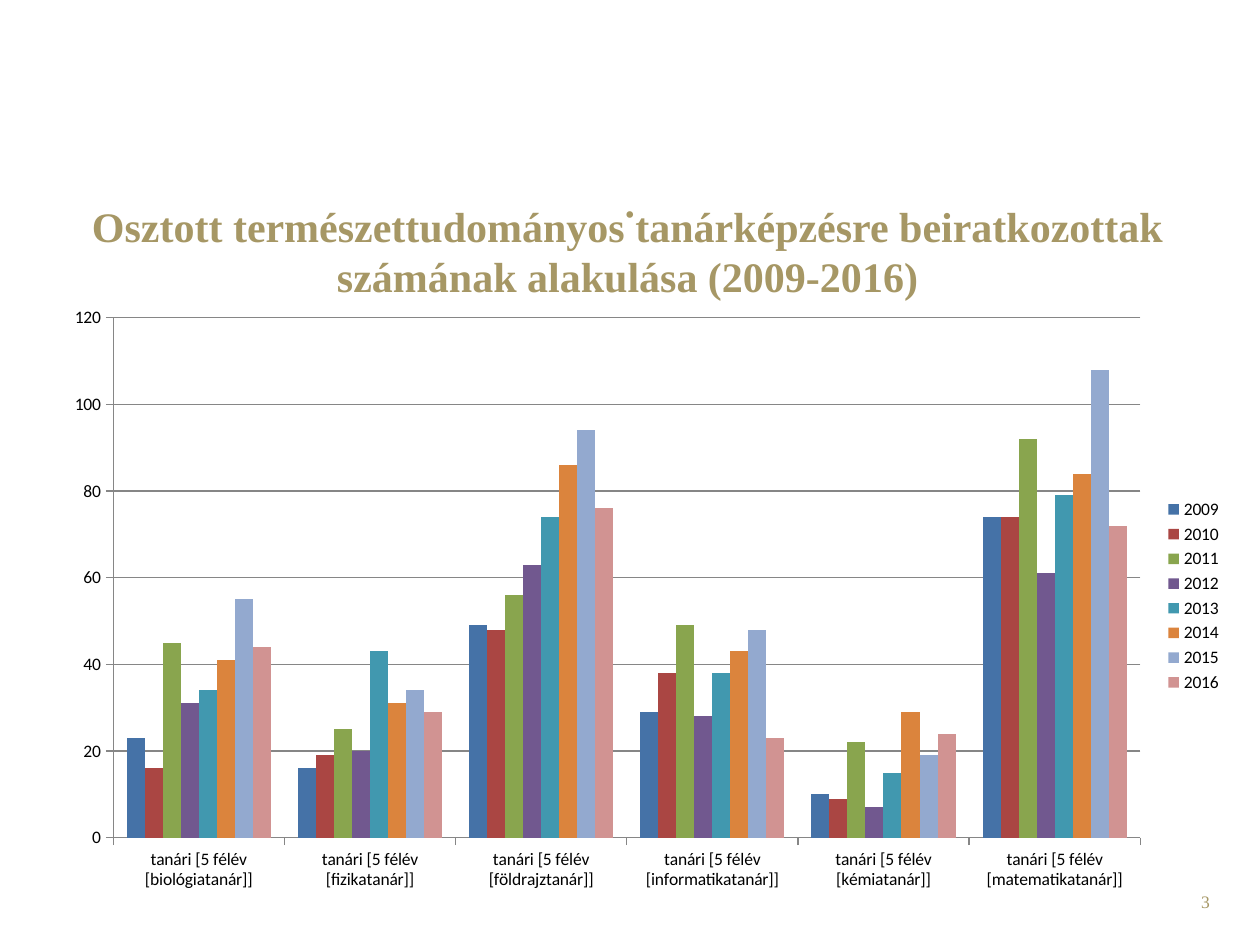
from typing import NamedTuple

from lxml import etree
from pptx import Presentation
from pptx import util as u
from pptx.chart.data import CategoryChartData
from pptx.dml.color import RGBColor
from pptx.enum import chart as chart_enum
from pptx.enum import text
from pptx.oxml import ns

GOLD = RGBColor(0xA6, 0x97, 0x65)
BLACK = RGBColor(0, 0, 0)
GRAY = RGBColor(0x86, 0x86, 0x86)
SERIF = "Times New Roman"
SANS = "Calibri"


class Box(NamedTuple):
    left: float
    top: float
    width: float
    height: float

    def lengths(self) -> list:
        return [u.Inches(value) for value in self]


class Year(NamedTuple):
    name: str
    color: RGBColor
    enrolled: tuple


SUBJECTS = ("biológia", "fizika", "földrajz", "informatika", "kémia", "matematika")
YEARS = (
    Year("2009", RGBColor(0x45, 0x72, 0xA7), (23, 16, 49, 29, 10, 74)),
    Year("2010", RGBColor(0xAA, 0x46, 0x43), (16, 19, 48, 38, 9, 74)),
    Year("2011", RGBColor(0x89, 0xA5, 0x4E), (45, 25, 56, 49, 22, 92)),
    Year("2012", RGBColor(0x71, 0x58, 0x8F), (31, 20, 63, 28, 7, 61)),
    Year("2013", RGBColor(0x41, 0x98, 0xAF), (34, 43, 74, 38, 15, 79)),
    Year("2014", RGBColor(0xDB, 0x84, 0x3D), (41, 31, 86, 43, 29, 84)),
    Year("2015", RGBColor(0x93, 0xA9, 0xCF), (55, 34, 94, 48, 19, 108)),
    Year("2016", RGBColor(0xD1, 0x93, 0x92), (44, 29, 76, 23, 24, 72)),
)


def write(shape, words: str, size: float, alignment, bold: bool = False) -> None:
    frame = shape.text_frame
    frame.word_wrap = True
    frame.auto_size = text.MSO_AUTO_SIZE.NONE
    frame.vertical_anchor = text.MSO_ANCHOR.TOP
    paragraph = frame.paragraphs[0]
    paragraph.alignment = alignment
    run = paragraph.add_run()
    run.text = words
    run.font.name = SERIF
    run.font.size = u.Pt(size)
    run.font.bold = bold
    run.font.color.rgb = GOLD


def place_plot(chart, plot_box: Box) -> None:
    plot_area = chart.plots[0]._element.getparent()
    for old in plot_area.findall(ns.qn("c:layout")):
        plot_area.remove(old)
    layout = etree.Element(ns.qn("c:layout"))
    manual = etree.SubElement(layout, ns.qn("c:manualLayout"))
    settings = [("layoutTarget", "inner"), ("xMode", "edge"), ("yMode", "edge")]
    settings += zip("xywh", plot_box)
    for tag, value in settings:
        etree.SubElement(manual, ns.qn(f"c:{tag}")).set("val", str(value))
    plot_area.insert(0, layout)


def add_enrolment_chart(slide, box: Box, plot_box: Box) -> None:
    data = CategoryChartData()
    data.categories = [f"tanári [5 félév [{subject}tanár]]" for subject in SUBJECTS]
    for year in YEARS:
        data.add_series(year.name, year.enrolled)
    chart = slide.shapes.add_chart(
        chart_enum.XL_CHART_TYPE.COLUMN_CLUSTERED, *box.lengths(), data
    ).chart
    chart.has_title = False
    chart.font.name = SANS
    chart.font.size = u.Pt(10)
    chart.font.color.rgb = BLACK
    chart.has_legend = True
    chart.legend.position = chart_enum.XL_LEGEND_POSITION.RIGHT
    chart.legend.include_in_layout = False
    plot = chart.plots[0]
    plot.gap_width = 150
    plot.overlap = 0
    plot.vary_by_categories = False
    for series, year in zip(plot.series, YEARS):
        series.format.fill.solid()
        series.format.fill.fore_color.rgb = year.color
    for axis in (chart.category_axis, chart.value_axis):
        axis.major_tick_mark = chart_enum.XL_TICK_MARK.OUTSIDE
        axis.minor_tick_mark = chart_enum.XL_TICK_MARK.NONE
        axis.format.line.color.rgb = GRAY
        axis.format.line.width = u.Pt(0.75)
    value_axis = chart.value_axis
    value_axis.minimum_scale = 0
    value_axis.maximum_scale = 120
    value_axis.major_unit = 20
    value_axis.has_major_gridlines = True
    value_axis.major_gridlines.format.line.color.rgb = GRAY
    value_axis.major_gridlines.format.line.width = u.Pt(0.75)
    place_plot(chart, plot_box)


def main() -> None:
    presentation = Presentation()
    presentation.slide_width = u.Inches(10)
    presentation.slide_height = u.Inches(7.5)
    slide = presentation.slides.add_slide(presentation.slide_layouts[5])

    title = slide.shapes.title
    title.left, title.top, title.width, title.height = Box(0, 1.23, 10, 0.87).lengths()
    write(title, ".", 32, text.PP_ALIGN.CENTER)
    title.text_frame.paragraphs[0].add_line_break()

    number = slide.shapes.add_textbox(*Box(7.37, 7.02, 2.33, 0.4).lengths())
    write(number, "3", 10, text.PP_ALIGN.RIGHT)

    heading = slide.shapes.add_textbox(*Box(0.04, 1.54, 9.88, 0.91).lengths())
    write(
        heading,
        "Osztott természettudományos tanárképzésre beiratkozottak "
        "számának alakulása (2009-2016)",
        24,
        text.PP_ALIGN.CENTER,
        bold=True,
    )

    add_enrolment_chart(
        slide, Box(0.43, 2.33, 9.37, 4.8), Box(0.05, 0.04, 0.87, 0.86)
    )
    presentation.save("out.pptx")


if __name__ == "__main__":
    main()
